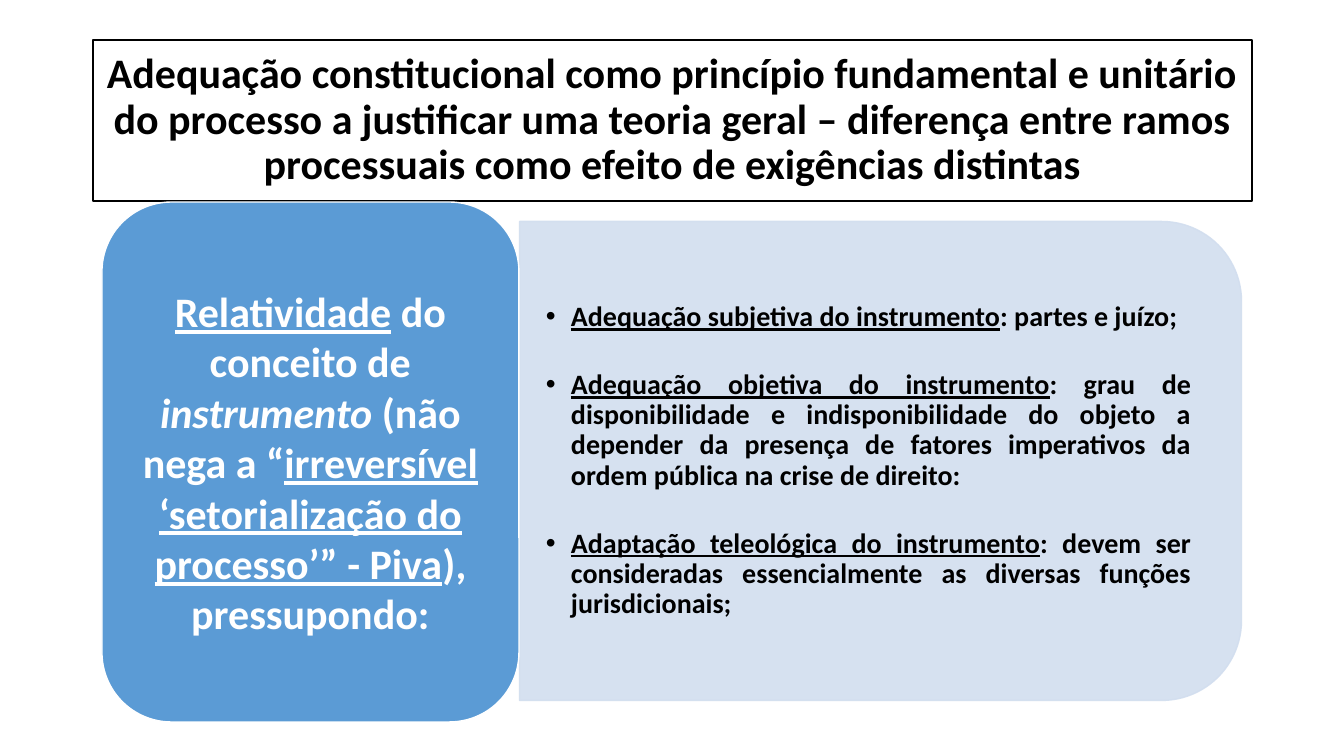
from pptx import Presentation
from pptx.dml.color import RGBColor
from pptx.enum.shapes import MSO_SHAPE
from pptx.enum.text import MSO_ANCHOR, MSO_AUTO_SIZE, PP_ALIGN
from pptx.oxml.ns import qn
from pptx.util import Pt
from lxml import etree

BLACK = RGBColor(0x00, 0x00, 0x00)
WHITE = RGBColor(0xFF, 0xFF, 0xFF)
BLUE = RGBColor(0x5B, 0x9B, 0xD5)
PALE_BLUE = RGBColor(0xD2, 0xDE, 0xEF)

CENTER, JUSTIFY = PP_ALIGN.CENTER, PP_ALIGN.JUSTIFY
MIDDLE = MSO_ANCHOR.MIDDLE
NO_AUTOFIT = MSO_AUTO_SIZE.NONE
ROUND_RECT = MSO_SHAPE.ROUNDED_RECTANGLE
ROUND_TOP = MSO_SHAPE.ROUND_2_SAME_RECTANGLE

EMU_PER_PX = 914400 / 100.8


def px(n):
    return round(n * EMU_PER_PX)


class SlideBuilder:
    font = "Calibri"

    def __init__(self, prs):
        self.slide = prs.slides.add_slide(prs.slide_layouts[1])

    def place(self, sp, box):
        sp.left, sp.top, sp.width, sp.height = map(px, box)

    def paint(self, sp, fill, line):
        sp.fill.solid()
        sp.fill.fore_color.rgb = fill
        sp.line.color.rgb = line
        sp.line.width = Pt(1)

    def frame(self, sp, inset_x, inset_y):
        tf = sp.text_frame
        tf.word_wrap = True
        tf.auto_size = NO_AUTOFIT
        tf.vertical_anchor = MIDDLE
        tf.margin_left = tf.margin_right = px(inset_x)
        tf.margin_top = tf.margin_bottom = px(inset_y)
        return tf

    def add_runs(self, p, runs, size, color, align, spacing):
        p.alignment = align
        p.line_spacing = spacing
        for text, style in runs:
            r = p.add_run()
            r.text = text
            r.font.name = self.font
            r.font.size = Pt(size)
            r.font.color.rgb = color
            r.font.bold = True
            r.font.underline = "u" in style
            r.font.italic = "i" in style

    def title(self, box, text, size):
        sp = self.slide.shapes.title
        self.place(sp, box)
        self.paint(sp, WHITE, BLACK)
        tf = self.frame(sp, 10, 5)
        self.add_runs(tf.paragraphs[0], [(text, "")], size, BLACK, CENTER, 0.9)

    def shape(self, kind, box, fill, line, rotation=0):
        sp = self.slide.shapes.add_shape(kind, *map(px, box))
        sp.shadow.inherit = False
        sp.rotation = rotation
        self.paint(sp, fill, line)
        return sp

    def fade(self, sp, percent):
        for clr in sp._element.spPr.iter(qn("a:srgbClr")):
            etree.SubElement(clr, qn("a:alpha"), val=str(percent * 1000))

    def label(self, sp, runs, size):
        tf = self.frame(sp, 12, 6)
        self.add_runs(tf.paragraphs[0], runs, size, WHITE, CENTER, 1.0)

    def bullets(self, box, items, size, gap):
        sp = self.slide.placeholders[1]
        self.place(sp, box)
        self.slide.shapes._spTree.append(sp._element)  # in front of the panel
        tf = self.frame(sp, 27, 14)
        for i, runs in enumerate(items):
            p = tf.add_paragraph() if i else tf.paragraphs[0]
            p.level = 1
            pPr = p._p.get_or_add_pPr()
            pPr.set("marL", str(px(25)))
            pPr.set("indent", str(px(-25)))
            etree.SubElement(pPr, qn("a:buFont"), typeface="Arial")
            etree.SubElement(pPr, qn("a:buChar"), char="•")
            p.space_before = Pt(gap if i else 0)
            p.space_after = Pt(0)
            self.add_runs(p, runs, size, BLACK, JUSTIFY, 0.9)


def main():
    prs = Presentation()
    prs.slide_width, prs.slide_height = px(1344), px(756)
    s = SlideBuilder(prs)

    # Title
    s.title((93, 40, 1159, 161),
            "Adequação constitucional como princípio fundamental e unitário do "
            "processo a justificar uma teoria geral – diferença entre ramos "
            "processuais como efeito de exigências distintas", 30)

    # Pale panel, turned so that its round corners face right
    panel = s.shape(ROUND_TOP, (641, 100, 479, 722), PALE_BLUE, PALE_BLUE, 90)
    s.fade(panel, 90)

    # Kinds of adequacy
    s.bullets((519, 245, 699, 432), [
        [("Adequação subjetiva do instrumento", "u"),
         (": partes e juízo;", "")],
        [("Adequação objetiva do instrumento", "u"),
         (": grau de disponibilidade e indisponibilidade do objeto a depender "
          "da presença de fatores imperativos da ordem pública na crise de "
          "direito:", "")],
        [("Adaptação teleológica do instrumento", "u"),
         (": devem ser consideradas essencialmente as diversas funções "
          "jurisdicionais;", "")],
    ], 20, 27)

    # Premise
    premise = s.shape(ROUND_RECT, (102, 202, 417, 520), BLUE, WHITE)
    s.label(premise, [
        ("Relatividade", "u"),
        (" do conceito de ", ""),
        ("instrumento ", "i"),
        ("(não nega a “", ""),
        ("irreversível ‘setorialização do processo’” - Piva", "u"),
        ("), pressupondo:", ""),
    ], 30)

    prs.save("out.pptx")


if __name__ == "__main__":
    main()
